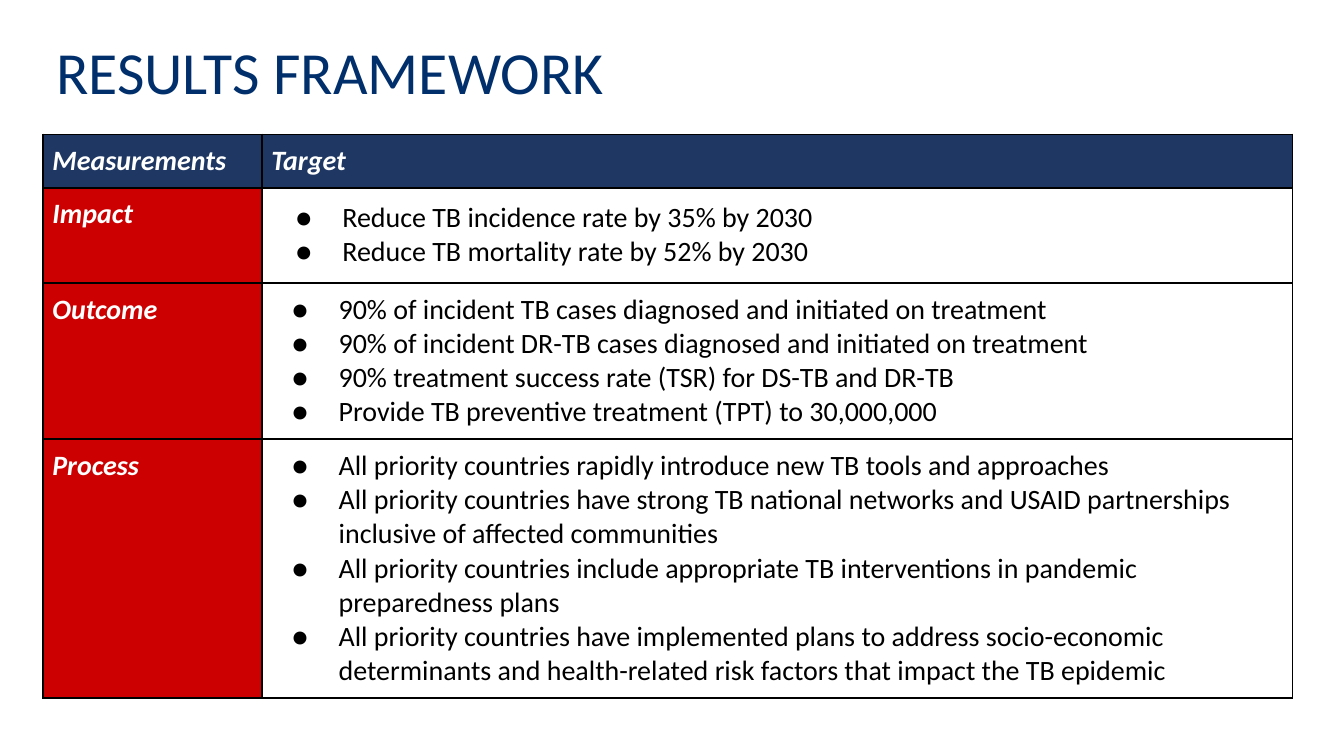
from lxml.etree import SubElement
from pptx import Presentation
from pptx.dml.color import RGBColor
from pptx.oxml.ns import qn
from pptx.util import Cm, Pt

COLORS = {
    "title": "002F6C",
    "header": "1F3863",
    "label": "CC0000",
    "light": "FFFFFF",
    "dark": "000000",
}

COLUMN_WIDTHS = [4.14, 11.61, 7.87]
ROW_HEIGHTS = [0.81, 1.47, 2.39, 3.96]
HEADINGS = ["Measurements", "Target"]
RESULTS = [
    ("Impact", 0.25, [
        "Reduce TB incidence rate by 35% by 2030",
        "Reduce TB mortality rate by 52% by 2030",
    ]),
    ("Outcome", 0.18, [
        "90% of incident TB cases diagnosed and initiated on treatment",
        "90% of incident DR-TB cases diagnosed and initiated on treatment",
        "90% treatment success rate (TSR) for DS-TB and DR-TB",
        "Provide TB preventive treatment (TPT) to 30,000,000",
    ]),
    ("Process", 0.18, [
        "All priority countries rapidly introduce new TB tools and approaches",
        "All priority countries have strong TB national networks and USAID "
        "partnerships inclusive of affected communities",
        "All priority countries include appropriate TB interventions in "
        "pandemic preparedness plans",
        "All priority countries have implemented plans to address "
        "socio-economic determinants and health-related risk factors that "
        "impact the TB epidemic",
    ]),
]


def rgb(name):
    return RGBColor.from_string(COLORS[name])


def write(p, text, size=15, color="dark", bold=False, italic=False, font="Calibri"):
    r = p.add_run()
    r.text = text
    r.font.name = font
    r.font.size = Pt(size)
    r.font.bold = bold
    r.font.italic = italic
    r.font.color.rgb = rgb(color)


def add_solid_color(parent, name):
    SubElement(parent, qn("a:srgbClr"), val=COLORS[name])


def add_bullet(p, left=1.27, hanging=0.89):
    pPr = p._p.get_or_add_pPr()
    pPr.set("marL", str(Cm(left)))
    pPr.set("indent", str(-Cm(hanging)))
    add_solid_color(SubElement(pPr, qn("a:buClr")), "dark")
    SubElement(pPr, qn("a:buFont"), typeface="Calibri")
    SubElement(pPr, qn("a:buChar"), char="●")


def add_borders(cell, width=1):
    tcPr = cell._tc.get_or_add_tcPr()
    for side in ("lnL", "lnR", "lnT", "lnB"):
        ln = SubElement(tcPr, qn(f"a:{side}"), w=str(Pt(width)))
        add_solid_color(SubElement(ln, qn("a:solidFill")), "dark")


def set_margins(box, margin):
    box.margin_left = box.margin_right = Cm(margin)
    box.margin_top = box.margin_bottom = Cm(margin)


class SlideBuilder:
    """Holds the current slide and the shared left edge and width."""

    left, width = Cm(0.81), Cm(sum(COLUMN_WIDTHS))

    def __init__(self, prs):
        self.s = prs.slides.add_slide(prs.slide_layouts[6])

    def title(self, text):
        sp = self.s.shapes.add_textbox(self.left, Cm(0.41), self.width, Cm(1.65))
        tf = sp.text_frame
        tf.word_wrap = True
        set_margins(tf, 0.25)
        write(tf.paragraphs[0], text, size=32, color="title")

    def table(self):
        frame = self.s.shapes.add_table(
            len(ROW_HEIGHTS), len(COLUMN_WIDTHS),
            self.left, Cm(2.54), self.width, Cm(sum(ROW_HEIGHTS)))
        tbl = frame.table
        tbl.first_row = tbl.horz_banding = False
        for column, width in zip(tbl.columns, COLUMN_WIDTHS):
            column.width = Cm(width)
        for row, height in zip(tbl.rows, ROW_HEIGHTS):
            row.height = Cm(height)
            for cell in row.cells:
                add_borders(cell)
                cell.fill.background()
            row.cells[1].merge(row.cells[2])
        for col, text in enumerate(HEADINGS):
            self.label_cell(tbl.cell(0, col), text, "header")
        for row, (label, margin, targets) in enumerate(RESULTS, 1):
            self.label_cell(tbl.cell(row, 0), label, "label")
            self.bullet_cell(tbl.cell(row, 1), targets, margin)

    def label_cell(self, cell, text, fill):
        set_margins(cell, 0.18)
        cell.fill.solid()
        cell.fill.fore_color.rgb = rgb(fill)
        write(cell.text_frame.paragraphs[0], text,
              color="light", bold=True, italic=True)

    def bullet_cell(self, cell, items, margin):
        set_margins(cell, margin)
        tf = cell.text_frame
        for i, text in enumerate(items):
            p = tf.add_paragraph() if i else tf.paragraphs[0]
            add_bullet(p)
            write(p, text)


def main():
    prs = Presentation()
    prs.slide_width, prs.slide_height = Cm(25.4), Cm(14.29)
    slide = SlideBuilder(prs)
    slide.table()
    slide.title("RESULTS FRAMEWORK")
    prs.save("out.pptx")


if __name__ == "__main__":
    main()
